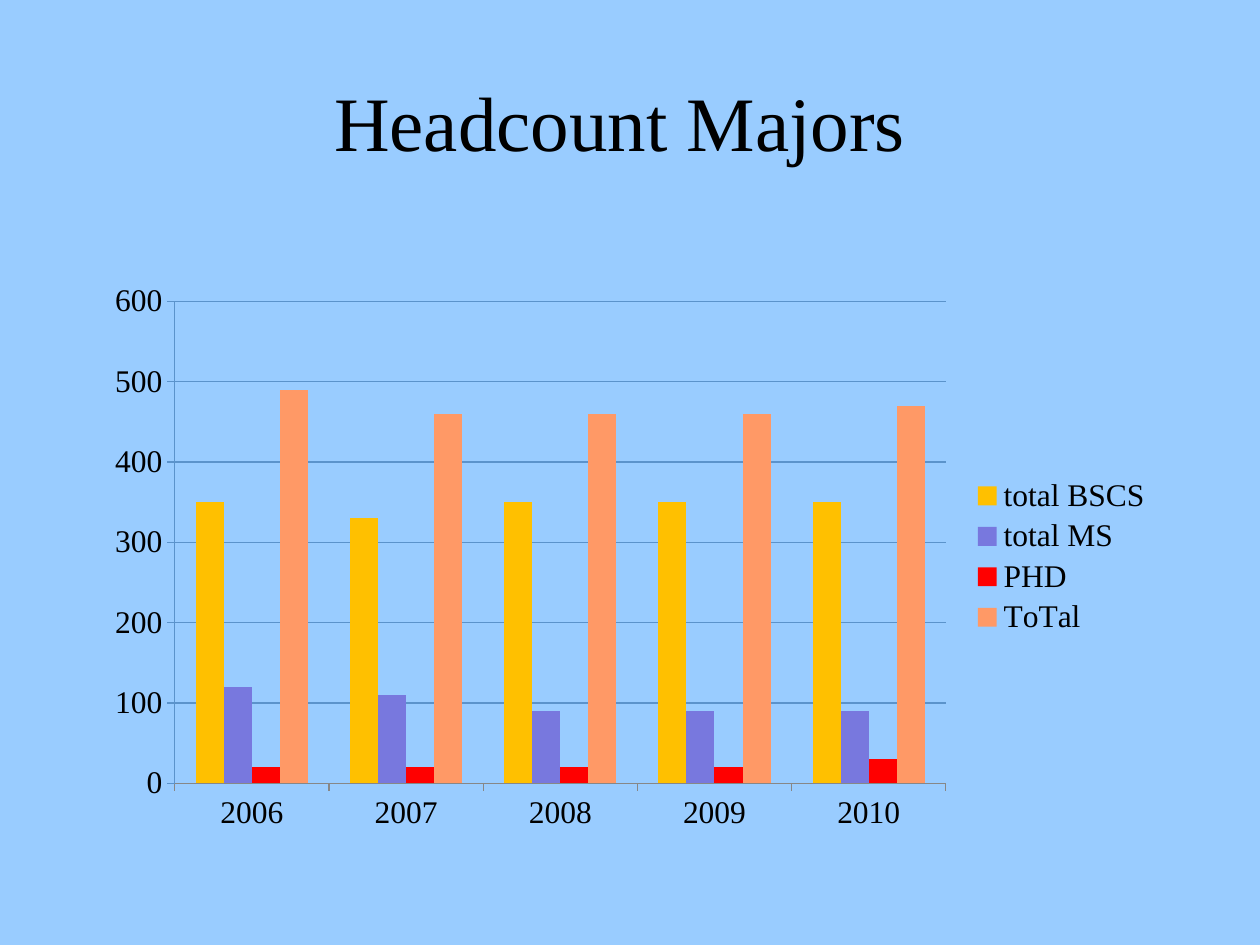
from lxml import etree
from pptx import Presentation
from pptx.chart.data import CategoryChartData
from pptx.dml.color import RGBColor
from pptx.enum.chart import XL_CHART_TYPE, XL_LEGEND_POSITION, XL_TICK_MARK
from pptx.enum.text import MSO_ANCHOR, PP_ALIGN
from pptx.oxml import parse_xml
from pptx.oxml.ns import nsdecls
from pptx.util import Inches, Pt

CLUSTERED = XL_CHART_TYPE.COLUMN_CLUSTERED
RIGHT = XL_LEGEND_POSITION.RIGHT
OUTSIDE = XL_TICK_MARK.OUTSIDE
NONE = XL_TICK_MARK.NONE
MIDDLE = MSO_ANCHOR.MIDDLE
CENTER = PP_ALIGN.CENTER

WIDTH, HEIGHT = Inches(10), Inches(7.5)
FONT = "Times New Roman"
BLACK, SKY, BLUE, GREY = "000000", "99CCFF", "5B93CB", "878787"
YEARS = ["2006", "2007", "2008", "2009", "2010"]
SERIES = [
    ("total BSCS", "FFC000", [350, 330, 350, 350, 350]),
    ("total MS", "7878DE", [120, 110, 90, 90, 90]),
    ("PHD", "FF0000", [20, 20, 20, 20, 30]),
    ("ToTal", "FF9966", [490, 460, 460, 460, 470]),
]


def color(target, value):
    target.rgb = RGBColor.from_string(value)


def fill(fmt, value):
    fmt.solid()
    color(fmt.fore_color, value)


def style_font(font, size):
    font.name = FONT
    font.size = Pt(size)
    color(font.color, BLACK)


def style_line(line, value):
    line.width = Pt(0.75)
    color(line.color, value)


def box(left, top, width, height):
    return (int(WIDTH * left), int(HEIGHT * top),
            int(WIDTH * width), int(HEIGHT * height))


def add_title(s, text):
    tf = s.shapes.add_textbox(*box(0.067, 0.044, 0.85, 0.167)).text_frame
    tf.word_wrap = True
    tf.vertical_anchor = MIDDLE
    p = tf.paragraphs[0]
    p.alignment = CENTER
    r = p.add_run()
    r.text = text
    style_font(r.font, 44)


def place_plot(chart, **shares):
    plot_area = chart._chartSpace.chart.plotArea
    for old in plot_area.findall("{*}layout"):
        plot_area.remove(old)
    layout = parse_xml(
        f'<c:layout {nsdecls("c")}><c:manualLayout>'
        '<c:layoutTarget val="inner"/><c:xMode val="edge"/><c:yMode val="edge"/>'
        '</c:manualLayout></c:layout>')
    for name, share in shares.items():
        tag = etree.QName(layout).namespace
        etree.SubElement(layout[0], f"{{{tag}}}{name}").set("val", str(share))
    plot_area.insert(0, layout)


def style_axis(axis, line):
    axis.major_tick_mark = OUTSIDE
    axis.minor_tick_mark = NONE
    style_line(axis.format.line, line)
    style_font(axis.tick_labels.font, 18)


def add_column_chart(s):
    data = CategoryChartData()
    data.categories = YEARS
    for name, _, values in SERIES:
        data.add_series(name, values)
    chart = s.shapes.add_chart(
        CLUSTERED, *box(0.075, 0.289, 0.85, 0.6), data).chart
    chart.has_title = False
    style_font(chart.font, 18)
    chart.has_legend = True
    chart.legend.position = RIGHT
    chart.legend.include_in_layout = False
    style_font(chart.legend.font, 18)

    plot = chart.plots[0]
    plot.gap_width, plot.overlap = 150, 0
    plot.vary_by_categories = False
    for series, (_, value, _) in zip(plot.series, SERIES):
        fill(series.format.fill, value)
        series.invert_if_negative = False

    style_axis(chart.category_axis, GREY)
    axis = chart.value_axis
    style_axis(axis, BLUE)
    axis.minimum_scale, axis.maximum_scale, axis.major_unit = 0, 600, 100
    axis.has_major_gridlines = True
    style_line(axis.major_gridlines.format.line, BLUE)
    place_plot(chart, x=0.075, y=0.05, w=0.72, h=0.85)


def main():
    prs = Presentation()
    prs.slide_width, prs.slide_height = WIDTH, HEIGHT
    s = prs.slides.add_slide(prs.slide_layouts[6])
    fill(s.background.fill, SKY)
    add_title(s, "Headcount Majors")
    add_column_chart(s)
    prs.save("out.pptx")


if __name__ == "__main__":
    main()
